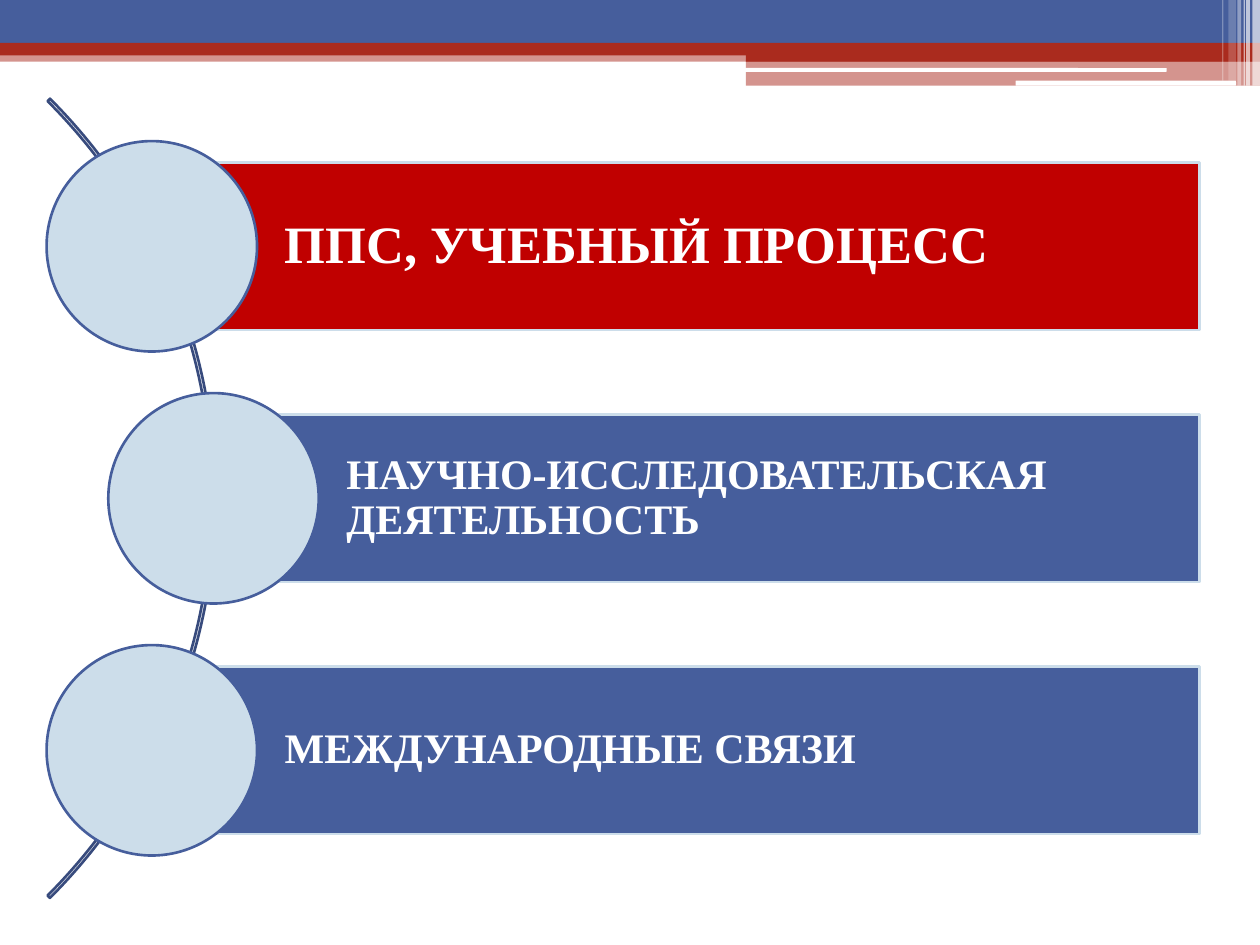
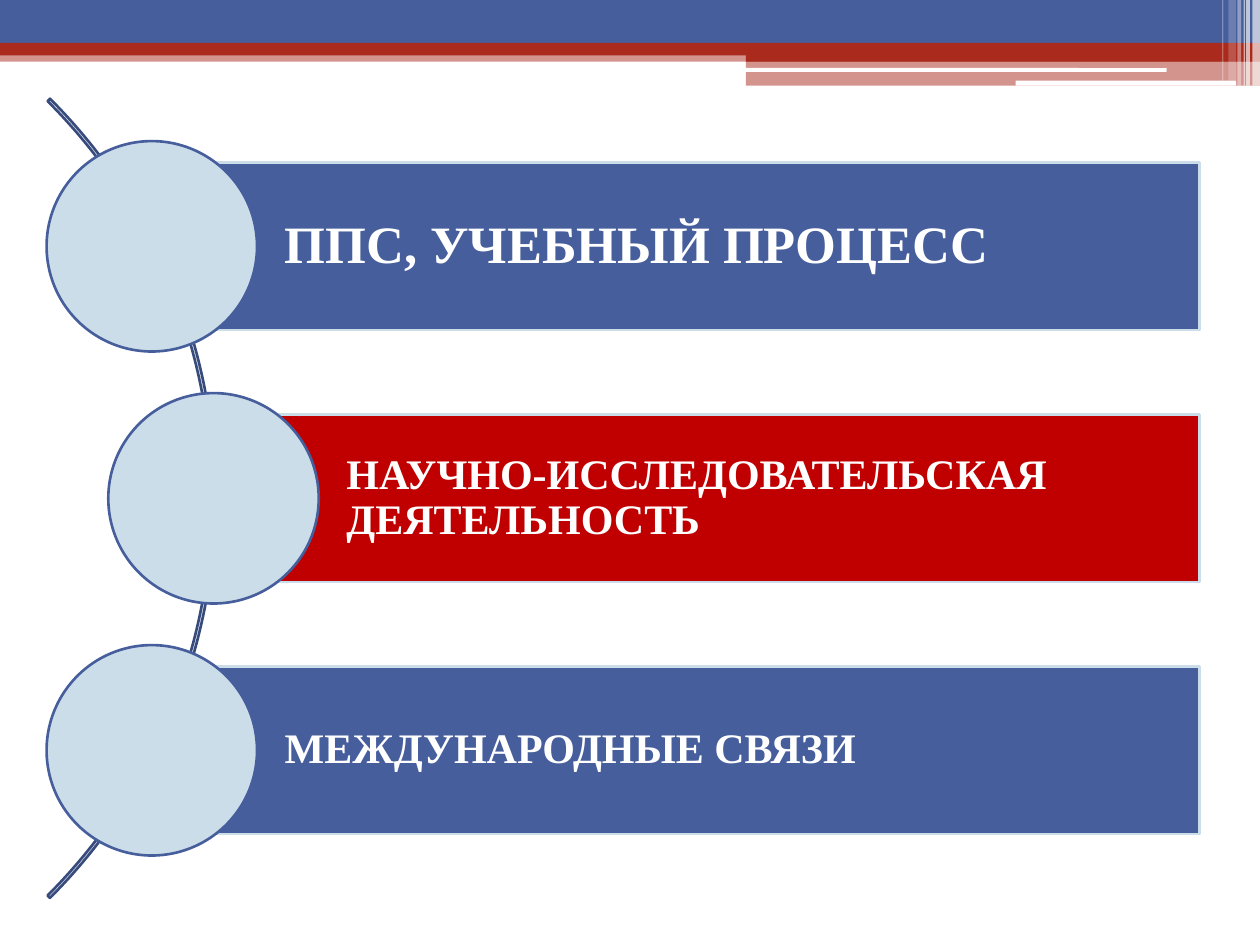
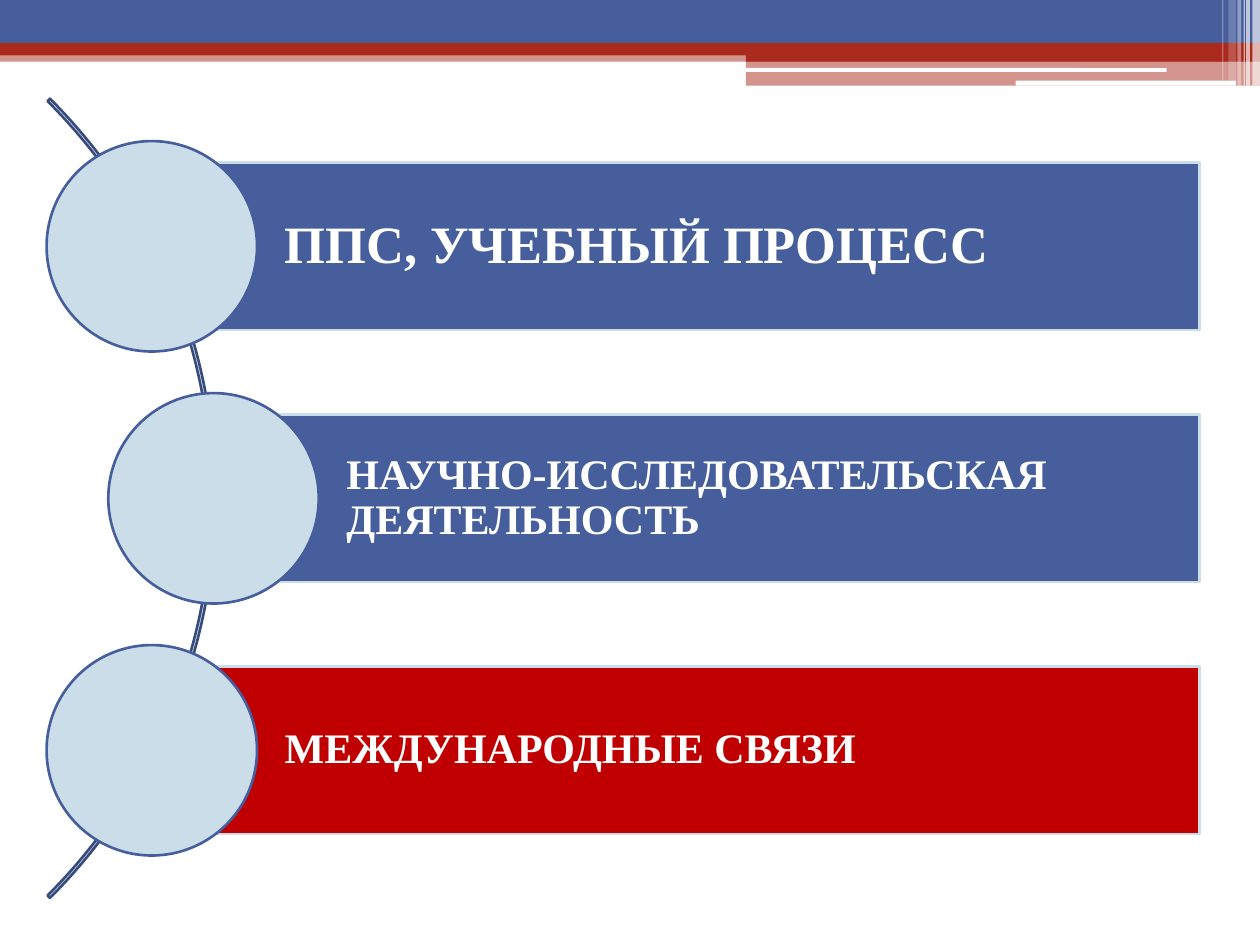
from lxml.etree import SubElement
from pptx import Presentation
from pptx.dml.color import RGBColor
from pptx.enum.shapes import MSO_SHAPE
from pptx.enum.text import MSO_ANCHOR, PP_ALIGN
from pptx.oxml.ns import qn
from pptx.util import Pt

PX = 9144  # EMU per px, 100 px to the inch
COLORS = {
    "blue": "465E9C",
    "brick": "AA2B1E",
    "red": "C00000",
    "pale": "CCDDEA",
    "arc": "384B7D",
    "white": "FFFFFF",
}
FONT = "Times New Roman"
BLANK_LAYOUT = 6

# Header bands: kind, box, colour, opacity in percent
HEADER = [
    (MSO_SHAPE.RECTANGLE, (0, 40, 1000, 9), "brick", 50),
    (MSO_SHAPE.RECTANGLE, (0, 0, 1000, 34), "blue", 100),
    (MSO_SHAPE.RECTANGLE, (0, 34, 1000, 10), "brick", 100),
    (MSO_SHAPE.RECTANGLE, (592, 39, 408, 10), "brick", 100),
    (MSO_SHAPE.RECTANGLE, (592, 48, 408, 20), "brick", 50),
    (MSO_SHAPE.ROUNDED_RECTANGLE, (591, 54, 335, 3), "white", 100),
    (MSO_SHAPE.ROUNDED_RECTANGLE, (806, 64, 175, 4), "white", 100),
]
# Pale stripes at the right end of the header: left, width, height, opacity
STRIPES = [
    (994, 6, 68, 65),
    (989, 3, 68, 65),
    (987, 1, 68, 60),
    (982, 3, 68, 40),
    (975, 6, 64, 20),
    (970, 1, 64, 30),
]

# Directions of work: text, left edge of the bar, text size
DIRECTIONS = [
    ("ППС, УЧЕБНЫЙ ПРОЦЕСС", 120, 30),
    ("НАУЧНО-ИССЛЕДОВАТЕЛЬСКАЯ ДЕЯТЕЛЬНОСТЬ", 169, 24),
    ("МЕЖДУНАРОДНЫЕ СВЯЗИ", 120, 24),
]
BAR_TOP, BAR_STEP, BAR_HEIGHT, BAR_RIGHT = 129, 200, 133, 952
CIRCLE = 167


class Deck:
    def __init__(self):
        self.presentation = Presentation()
        self.presentation.slide_width = 1000 * PX
        self.presentation.slide_height = 750 * PX
        self.layout = self.presentation.slide_layouts[BLANK_LAYOUT]
        self.slide = None

    def add_slide(self):
        self.slide = self.presentation.slides.add_slide(self.layout)

    def shape(self, kind, box, fill=None, line=None, opacity=100):
        shape = self.slide.shapes.add_shape(kind, *(length * PX for length in box))
        shape.shadow.inherit = False
        if fill:
            shape.fill.solid()
            shape.fill.fore_color.rgb = RGBColor.from_string(COLORS[fill])
            if opacity < 100:
                color = shape.element.spPr.find(qn("a:solidFill"))[0]
                SubElement(color, qn("a:alpha"), val=str(opacity * 1000))
        else:
            shape.fill.background()
        if line:
            shape.line.color.rgb = RGBColor.from_string(COLORS[line])
            shape.line.width = Pt(1.5)
        else:
            shape.line.fill.background()
        return shape

    def header(self):
        """Draw the header once and move it to the layout all slides share."""
        stripes = [(MSO_SHAPE.RECTANGLE, (left, 0, width, height), "white", opacity)
                   for left, width, height, opacity in STRIPES]
        for kind, box, fill, opacity in HEADER + stripes:
            band = self.shape(kind, box, fill, opacity=opacity)
            self.layout.shapes.element.append(band.element)

    def arc(self):
        arc = self.shape(MSO_SHAPE.BLOCK_ARC, (-726, -53, 897, 897), line="arc")
        # Start and end angles (315° and 45°), then the ring thickness
        for index, value in enumerate((189, 27, 0.003)):
            arc.adjustments[index] = value

    def bar(self, text, left, top, size, fill):
        box = (left, top, BAR_RIGHT - left, BAR_HEIGHT)
        frame = self.shape(MSO_SHAPE.RECTANGLE, box, fill, "pale").text_frame
        frame.word_wrap = True
        frame.vertical_anchor = MSO_ANCHOR.MIDDLE
        frame.margin_left = 106 * PX
        frame.margin_top = frame.margin_right = frame.margin_bottom = 8 * PX
        paragraph = frame.paragraphs[0]
        paragraph.text = text
        paragraph.alignment = PP_ALIGN.LEFT
        paragraph.line_spacing = 0.9
        paragraph.font.name = FONT
        paragraph.font.size = Pt(size)
        paragraph.font.bold = True
        paragraph.font.color.rgb = RGBColor.from_string(COLORS["white"])

    def circle(self, center, middle):
        box = (center - CIRCLE // 2, middle - CIRCLE // 2, CIRCLE, CIRCLE)
        self.shape(MSO_SHAPE.OVAL, box, "pale", "blue")

    def directions(self, current):
        """List all directions along the arc, with the current one in red."""
        self.arc()
        for index, (text, left, size) in enumerate(DIRECTIONS):
            top = BAR_TOP + index * BAR_STEP
            self.bar(text, left, top, size, "red" if index == current else "blue")
            self.circle(left, top + BAR_HEIGHT // 2)


def main():
    deck = Deck()
    for current in range(len(DIRECTIONS)):
        deck.add_slide()
        if current == 0:
            deck.header()
        deck.directions(current)
    deck.presentation.save("out.pptx")


if __name__ == "__main__":
    main()
